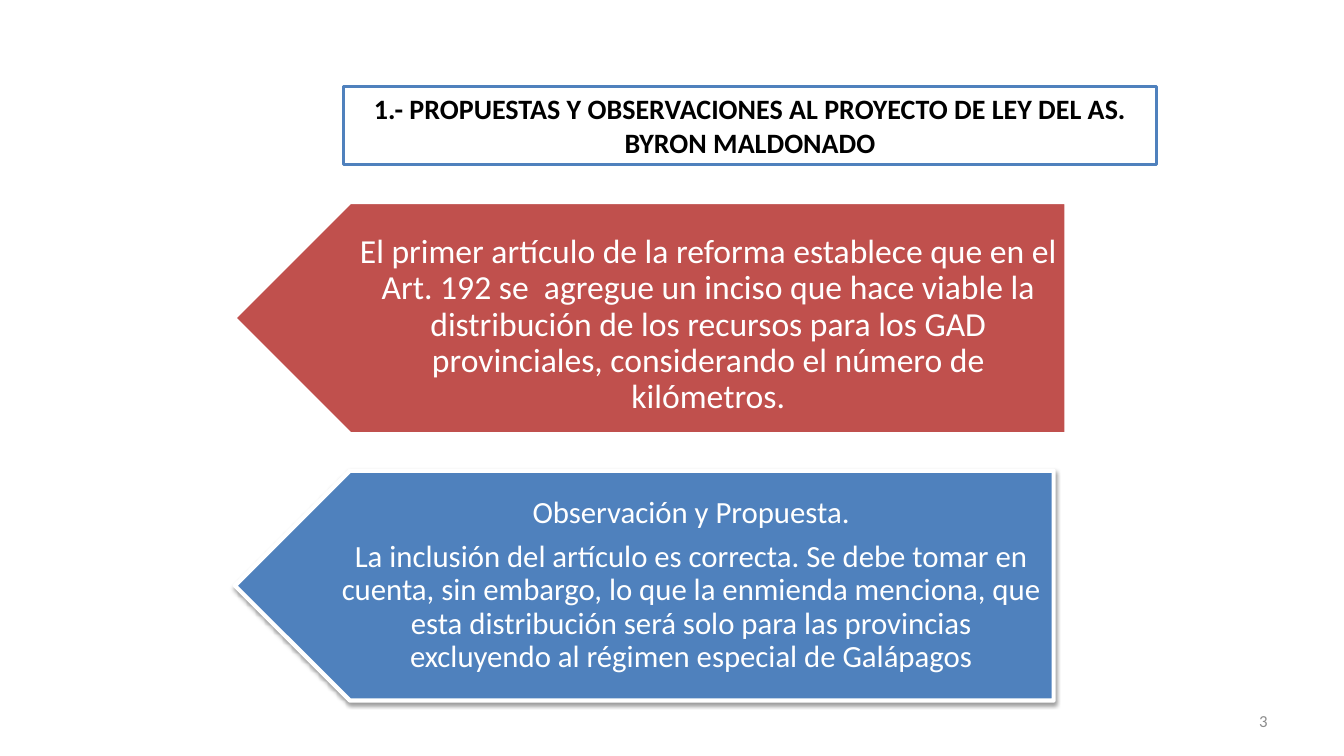
from lxml import etree
from pptx import Presentation
from pptx.dml.color import RGBColor
from pptx.enum.shapes import MSO_SHAPE as Shape
from pptx.enum.text import MSO_ANCHOR as Anchor, PP_ALIGN as Align
from pptx.util import Inches, Pt

WHITE = RGBColor(0xFF, 0xFF, 0xFF)
BLACK = RGBColor(0x00, 0x00, 0x00)
GRAY = RGBColor(0x8C, 0x8C, 0x8C)
RED = RGBColor(0xC0, 0x50, 0x4D)
BLUE = RGBColor(0x4F, 0x81, 0xBD)

SHADOW = (
    '<a:outerShdw xmlns:a="http://schemas.openxmlformats.org/drawingml/2006/main"'
    ' blurRad="40000" dist="20000" dir="5400000" rotWithShape="0">'
    '<a:srgbClr val="000000"><a:alpha val="38000"/></a:srgbClr></a:outerShdw>'
)

prs = Presentation()
prs.slide_width, prs.slide_height = Inches(13.33), Inches(7.5)
slide = prs.slides.add_slide(prs.slide_layouts[6])


def add_panel(kind, box, fill, line, width):
    panel = slide.shapes.add_shape(kind, *map(Inches, box))
    panel.shadow.inherit = False
    panel.fill.solid()
    panel.fill.fore_color.rgb = fill
    panel.line.color.rgb = line
    panel.line.width = Pt(width)
    return panel


def set_text(frame, lines, size, color, align):
    frame.word_wrap = True
    frame.vertical_anchor = Anchor.MIDDLE
    for i, line in enumerate(lines):
        para = frame.paragraphs[0] if i == 0 else frame.add_paragraph()
        para.text = line
        para.alignment = align
        para.font.name = "Calibri"
        para.font.size = Pt(size)
        para.font.color.rgb = color


# Title box
title = add_panel(Shape.RECTANGLE, (3.41, 0.86, 8.06, 0.77), WHITE, BLUE, 2)
set_text(title.text_frame,
         ["1.- PROPUESTAS Y OBSERVACIONES AL PROYECTO DE LEY DEL AS. BYRON MALDONADO"],
         20, BLACK, Align.CENTER)
title.text_frame.paragraphs[0].font.bold = True

# Slide number
number = slide.shapes.add_textbox(Inches(9.56), Inches(6.95), Inches(3.11), Inches(0.4))
set_text(number.text_frame, ["3"], 12, GRAY, Align.RIGHT)

# Left-pointing arrows: top, width, height, fill, line, shadow, text box, size, lines
arrows = [
    (2.01, 8.24, 2.29, RED, 2, False, (2.84, 2.08, 7.84), 24, [
        "El primer artículo de la reforma establece que en el Art. 192 se  agregue "
        "un inciso que hace viable la distribución de los recursos para los GAD "
        "provinciales, considerando el número de kilómetros."]),
    (4.67, 8.12, 2.28, BLUE, 3, True, (2.74, 4.67, 7.7), 22, [
        "Observación y Propuesta.",
        "La inclusión del artículo es correcta. Se debe tomar en cuenta, sin embargo, "
        "lo que la enmienda menciona, que esta distribución será solo para las "
        "provincias excluyendo al régimen especial de Galápagos"]),
]
for top, wide, high, fill, line, shade, box, size, lines in arrows:
    arrow = add_panel(Shape.PENTAGON, (2.33, top, wide, high), fill, WHITE, line)
    arrow.rotation = 180
    if shade:
        effects = arrow.element.spPr.find("{*}effectLst")
        effects.append(etree.fromstring(SHADOW))

    label = slide.shapes.add_textbox(*map(Inches, (*box, high)))
    frame = label.text_frame
    frame.margin_left, frame.margin_right = Inches(0.65), Inches(0.12)
    frame.margin_top = frame.margin_bottom = Inches(0.07)
    set_text(frame, lines, size, WHITE, Align.CENTER)
    for para in frame.paragraphs:
        para.line_spacing = 0.9
        para.space_after = Pt(size * 0.35)

prs.save("out.pptx")
